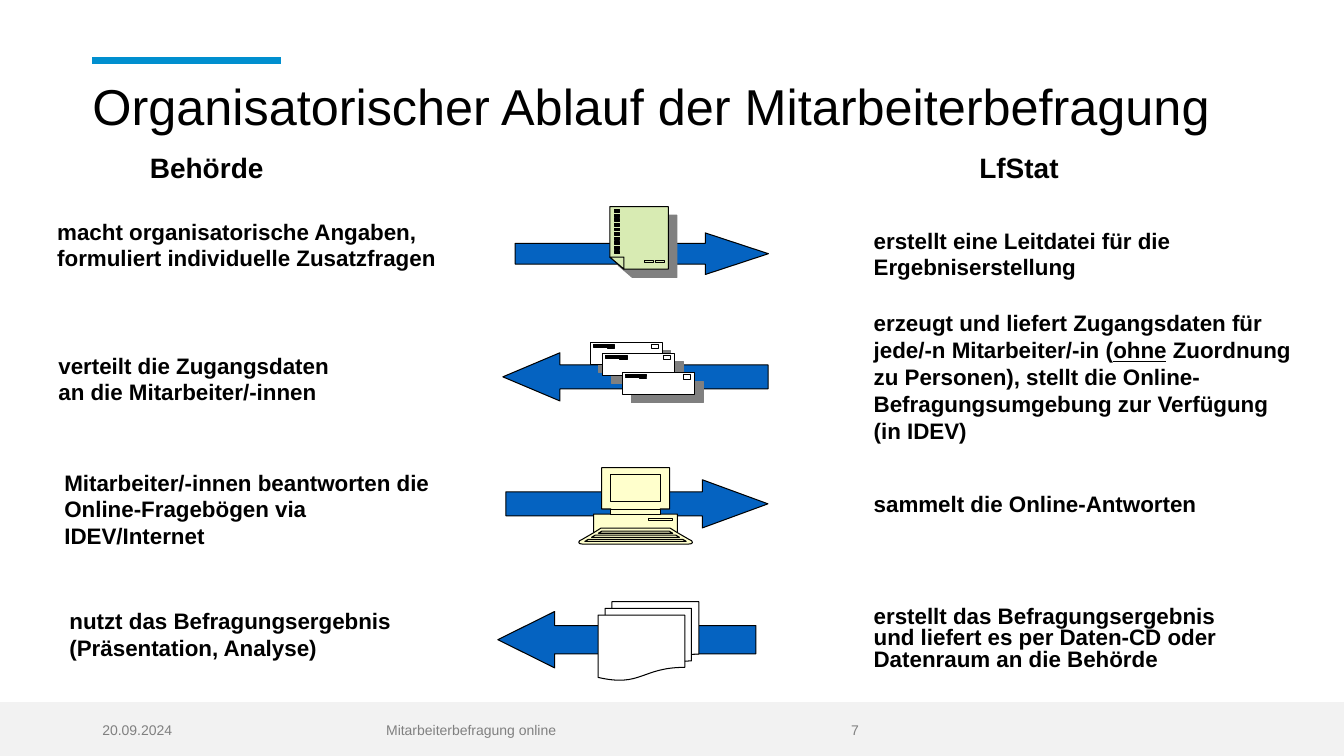
from dataclasses import dataclass

from lxml.etree import SubElement
from pptx import Presentation
from pptx.dml.color import RGBColor
from pptx.enum.shapes import MSO_CONNECTOR as Connector, MSO_SHAPE as Shape
from pptx.enum.text import MSO_ANCHOR as Anchor, PP_ALIGN as Align
from pptx.oxml.ns import qn
from pptx.util import Pt


@dataclass(frozen=True)
class Theme:
    font: str = "Arial"
    title: float = 36
    heading: float = 20
    body: float = 16
    footer: float = 10
    outline: float = 0.75
    black: str = "000000"
    gray: str = "808080"
    band: str = "F2F2F2"
    accent: str = "008FCF"
    arrow: str = "0563C1"
    sheet: str = "D8EBB3"
    paper: str = "FFFFFF"
    computer: str = "FFFFCC"


THEME = Theme()


def color(value):
    return RGBColor.from_string(value)


def place(shape, area):
    shape.left, shape.top, shape.width, shape.height = map(Pt, area)


def write(frame, text, size, tint=THEME.black, bold=False, align=Align.LEFT,
          spacing=None, anchor=Anchor.TOP, left=7.2, right=7.2):
    frame.word_wrap = True
    frame.vertical_anchor = anchor
    frame.margin_left, frame.margin_right = Pt(left), Pt(right)
    frame.margin_top = frame.margin_bottom = Pt(3.6)
    frame.text = text
    for para in frame.paragraphs:
        para.alignment = align
        para.line_spacing = spacing
        first, *others = para.text.split("|")
        para.text = first
        for part in others:
            para.add_run().text = part
        for index, span in enumerate(para.runs):
            span.font.name = THEME.font
            span.font.size = Pt(size)
            span.font.bold = bold
            span.font.color.rgb = color(tint)
            span.font.underline = index % 2 == 1


def add_text(page, area, text, size=THEME.body, **style):
    box = page.shapes.add_textbox(*map(Pt, area))
    write(box.text_frame, text, size, **style)


def paint(shape, fill, outlined=True):
    shape.shadow.inherit = False
    shape.fill.solid()
    shape.fill.fore_color.rgb = color(fill)
    if outlined:
        shape.line.color.rgb = color(THEME.black)
        shape.line.width = Pt(THEME.outline)
    else:
        shape.line.fill.background()


def add_preset(page, kind, area, fill, outlined=True):
    shape = page.shapes.add_shape(kind, *map(Pt, area))
    paint(shape, fill, outlined)
    return shape


def add_arrow(page, kind, area, head):
    arrow = add_preset(page, kind, area, THEME.arrow)
    arrow.adjustments[0] = 0.5
    arrow.adjustments[1] = head


def add_outline(page, contours, fill, close=True):
    scaled = [[(Pt(x), Pt(y)) for x, y in contour] for contour in contours]
    builder = page.shapes.build_freeform(*scaled[0][0])
    builder.add_line_segments(scaled[0][1:], close=close)
    for contour in scaled[1:]:
        builder.move_to(*contour[0])
        builder.add_line_segments(contour[1:], close=close)
    shape = builder.convert_to_shape()
    paint(shape, fill)
    return shape


def add_shadow(shape):
    effects = shape.element.spPr.find(qn("a:effectLst"))
    shadow = SubElement(effects, qn("a:outerShdw"), dist=str(Pt(8.5)),
                        dir="2700000", algn="ctr", rotWithShape="0")
    SubElement(shadow, qn("a:srgbClr"), val=THEME.gray)


def rectangle(x, y, width, height):
    return [(x, y), (x + width, y), (x + width, y + height), (x, y + height)]


def mirrored(axis, half):
    right = [(axis + offset, y) for offset, y in half]
    left = [(axis - offset, y) for offset, y in reversed(half)]
    return right + left


def add_sheet(page):
    outline = [(435.6, 147.6), (477.4, 147.6), (477.4, 192.2),
               (445.7, 192.2), (435.6, 183.6)]
    add_shadow(add_outline(page, [outline], THEME.sheet))
    fold = [(435.6, 183.6), (445.7, 183.6), (445.7, 192.2)]
    fields = [rectangle(x, 185.9, 6.5, 1.4) for x in (460.1, 468)]
    add_outline(page, [fold, *fields], THEME.sheet)
    holes = [rectangle(439.2, 149.8 + 3.28 * row, 3.6, 2) for row in range(10)]
    add_outline(page, holes, THEME.black)


def add_envelope(page, x, y):
    body = add_outline(page, [rectangle(x, y, 51.4, 15.4)], THEME.paper)
    add_shadow(body)
    stamp = rectangle(x + 43.5, y + 1.5, 4.9, 3)
    sender = [rectangle(x + 2, y + 1.5 + 0.8 * row, 15.3, 0.5) for row in range(3)]
    city = rectangle(x + 12.2, y + 3.9, 5.1, 0.5)
    add_outline(page, [stamp, *sender, city], THEME.paper)


def add_computer(page, axis=454):
    half = [(24.3, 334.1), (24.3, 363.6), (17.6, 363.6), (17.6, 367.2),
            (29.9, 367.2), (29.9, 380.5), (38, 385.2), (40, 386.2),
            (40.6, 387.4), (40, 388.3), (38, 388.6)]
    add_outline(page, [mirrored(axis, half)], THEME.computer)
    edge = [(axis - 29.9, 380.5), (axis - 24.8, 377.3),
            (axis + 24.8, 377.3), (axis + 29.9, 380.5)]
    add_outline(page, [edge], THEME.computer, close=False)
    keys = [mirrored(axis, [(24.1 + 4.8 * row, 379.4 + 2.9 * row),
                            (26.6 + 4.8 * row, 380.9 + 2.9 * row)])
            for row in range(3)]
    screen = rectangle(axis - 17.6, 339.1, 35.3, 19.4)
    neck = rectangle(axis - 17.6, 363.6, 35.3, 3.6)
    slot = rectangle(axis + 9, 370.1, 17.3, 1.4)
    add_outline(page, [*keys, screen, neck, slot], THEME.computer)


def add_frame(page):
    add_preset(page, Shape.RECTANGLE, (0, 501.6, 960, 38.4), THEME.band, False)
    rule = page.shapes.add_connector(Connector.STRAIGHT, Pt(66), Pt(42.9), Pt(200.9), Pt(42.9))
    rule.line.color.rgb = color(THEME.accent)
    rule.line.width = Pt(5)
    SubElement(rule.element.spPr, qn("a:effectLst"))
    title = page.shapes.title
    place(title, (66, 54.7, 828, 51.8))
    write(title.text_frame, "Organisatorischer Ablauf der Mitarbeiterbefragung",
          THEME.title, spacing=0.9, left=0)
    footer = dict(size=THEME.footer, tint=THEME.gray, anchor=Anchor.MIDDLE)
    add_text(page, (66, 506.9, 85, 28.8), "20.09.2024", **footer)
    add_text(page, (151, 506.9, 378, 28.8), "Mitarbeiterbefragung online",
             align=Align.CENTER, left=0, **footer)
    add_text(page, (528.5, 506.9, 85, 28.8), "7", align=Align.RIGHT, right=0, **footer)


def add_columns(page):
    heading = dict(size=THEME.heading, bold=True, align=Align.CENTER, spacing=0.8)
    add_text(page, (85.7, 108.7, 131, 31.7), "Behörde", left=0, **heading)
    add_text(page, (673.2, 108.7, 109.4, 31.7), "LfStat", **heading)
    tasks = [
        ((33.8, 151.9, 286, 46),
         "macht organisatorische Angaben,\nformuliert individuelle Zusatzfragen", None),
        ((34.6, 247.7, 213, 46), "verteilt die Zugangsdaten\nan die Mitarbeiter/-innen", None),
        ((38.9, 331.2, 276, 65.5),
         "Mitarbeiter/-innen beantworten die Online-Fragebögen via IDEV/Internet", None),
        ((42.5, 430.2, 255.6, 71.3),
         "nutzt das Befragungsergebnis (Präsentation, Analyse)", None),
        ((617, 158.4, 257.8, 46),
         "erstellt eine Leitdatei für die Ergebniserstellung", None),
        ((617, 217.6, 315.4, 104.4),
         "erzeugt und liefert Zugangsdaten für jede/-n Mitarbeiter/-in (|ohne| Zuordnung "
         "zu Personen), stellt die Online-Befragungsumgebung zur Verfügung (in IDEV)", None),
        ((617, 349.9, 252.7, 23), "sammelt die Online-Antworten", 0.8),
        ((617, 430, 280, 54),
         "erstellt das Befragungsergebnis und liefert es per Daten-CD oder "
         "Datenraum an die Behörde", 0.8),
    ]
    for area, text, spacing in tasks:
        add_text(page, area, text, bold=True, spacing=spacing)


def add_flow(page):
    add_arrow(page, Shape.RIGHT_ARROW, (368, 166.4, 180.9, 29.7), 1.518)
    add_sheet(page)
    add_arrow(page, Shape.LEFT_ARROW, (359.2, 252, 189.4, 34.4), 1.185)
    for x, y in ((421.8, 244.7), (430.6, 252.5), (444.8, 266.3)):
        add_envelope(page, x, y)
    add_arrow(page, Shape.RIGHT_ARROW, (361.4, 342.7, 187.2, 34.4), 1.363)
    add_computer(page)
    add_arrow(page, Shape.LEFT_ARROW, (355.6, 436.8, 184.3, 40.3), 1.009)
    add_preset(page, Shape.FLOWCHART_MULTIDOCUMENT, (427.2, 429.8, 72, 56.2), THEME.paper)


def main():
    deck = Presentation()
    deck.slide_width, deck.slide_height = Pt(960), Pt(540)
    page = deck.slides.add_slide(deck.slide_layouts[5])
    add_frame(page)
    add_columns(page)
    add_flow(page)
    deck.save("out.pptx")


if __name__ == "__main__":
    main()
